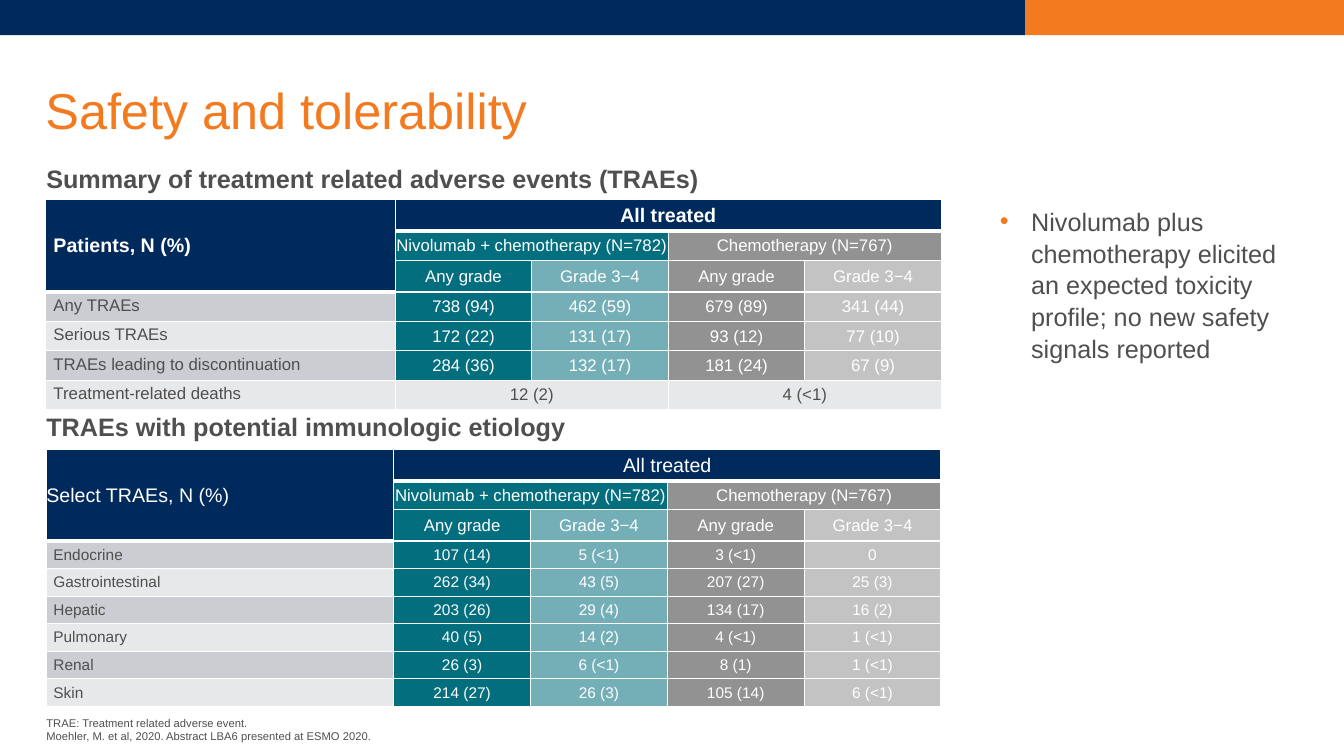
from dataclasses import dataclass

from lxml import etree
from pptx import Presentation
from pptx import util as u
from pptx.dml.color import RGBColor
from pptx.enum import shapes, text
from pptx.oxml import ns

COLORS = {
    "navy": "002A5C", "orange": "F47A20", "white": "FFFFFF", "text": "4E4F4E",
    "teal": "026E7E", "grey": "929292", "band": "CCCDD2", "light": "E7E8EA",
}
FONT = "Arial"
ARM_FILLS = [("teal", 100), ("teal", 55), ("grey", 100), ("grey", 55)]
SLIDE_W, SLIDE_H = u.Inches(13.333), u.Inches(7.5)
HEADER_ROWS = 3


@dataclass
class Box:
    """Place and size in percent of the slide's width and height."""
    left: float
    top: float
    width: float
    height: float

    def emu(self) -> tuple[int, int, int, int]:
        return col(self.left), row(self.top), col(self.width), row(self.height)


@dataclass
class EventTable:
    """One adverse-event table; None continues the cell to its left."""
    heading: str
    heading_top: float
    left: float
    top: float
    label_width: float
    value_width: float
    header_heights: tuple[float, float, float]
    row_height: float
    corner: str
    corner_margin: float
    label_margin: float
    label_anchor: text.MSO_ANCHOR
    bold_header: bool
    size: int
    pad: float
    rows: list[tuple[str | None, ...]]


TABLES = [
    EventTable(
        "Summary of treatment related adverse events (TRAEs)", 20.93,
        3.38, 26.4, 26.03, 10.16, (4.13, 3.87, 4.07), 3.89,
        "Patients, N (%)", 0.08, 0.08, text.MSO_ANCHOR.TOP, True, 12, 0.04,
        [("Any TRAEs", "738 (94)", "462 (59)", "679 (89)", "341 (44)"),
         ("Serious TRAEs", "172 (22)", "131 (17)", "93 (12)", "77 (10)"),
         ("TRAEs leading to discontinuation", "284 (36)", "132 (17)", "181 (24)", "67 (9)"),
         ("Treatment-related deaths", "12 (2)", None, "4 (<1)", None)]),
    EventTable(
        "TRAEs with potential immunologic etiology", 53.73,
        3.45, 59.47, 25.85, 10.18, (4.13, 3.7, 4.13), 3.65,
        "Select TRAEs, N (%)", 0, 0.07, text.MSO_ANCHOR.MIDDLE, False, 11, 0,
        [("Endocrine", "107 (14)", "5 (<1)", "3 (<1)", "0"),
         ("Gastrointestinal", "262 (34)", "43 (5)", "207 (27)", "25 (3)"),
         ("Hepatic", "203 (26)", "29 (4)", "134 (17)", "16 (2)"),
         ("Pulmonary", "40 (5)", "14 (2)", "4 (<1)", "1 (<1)"),
         ("Renal", "26 (3)", "6 (<1)", "8 (1)", "1 (<1)"),
         ("Skin", "214 (27)", "26 (3)", "105 (14)", "6 (<1)")]),
]


def col(percent: float) -> int:
    return round(SLIDE_W * percent / 100)


def row(percent: float) -> int:
    return round(SLIDE_H * percent / 100)


def rgb(name: str) -> RGBColor:
    return RGBColor.from_string(COLORS[name])


def sub(parent, tag: str, **attrs: str):
    return etree.SubElement(parent, ns.qn(tag), attrs)


def style(p, size: float, color: str, bold: bool = False) -> None:
    p.font.name, p.font.size, p.font.bold = FONT, u.Pt(size), bold
    p.font.color.rgb = rgb(color)


def place(sp, box: Box) -> None:
    sp.left, sp.top, sp.width, sp.height = box.emu()


def set_margins(item, left: float, top: float, right: float, bottom: float) -> None:
    item.margin_left, item.margin_top = u.Inches(left), u.Inches(top)
    item.margin_right, item.margin_bottom = u.Inches(right), u.Inches(bottom)


def add_bar(s, box: Box, color: str) -> None:
    sp = s.shapes.add_shape(shapes.MSO_SHAPE.RECTANGLE, *box.emu())
    sp.shadow.inherit = False
    sp.fill.solid()
    sp.fill.fore_color.rgb = rgb(color)
    sp.line.fill.background()


def add_text(s, box: Box, lines: list[str], size: float, bold: bool = False):
    tf = s.shapes.add_textbox(*box.emu()).text_frame
    tf.word_wrap = True
    tf.text = "\n".join(lines)
    for p in tf.paragraphs:
        style(p, size, "text", bold)
    return tf


def paint_cell(cell, color: str, alpha: int, bottom: float) -> None:
    """Fill a cell and give it white borders."""
    cell.fill.solid()
    cell.fill.fore_color.rgb = rgb(color)
    tc_pr = cell._tc.get_or_add_tcPr()
    if alpha < 100:
        sub(tc_pr.find(".//" + ns.qn("a:srgbClr")), "a:alpha", val=str(alpha * 1000))
    for i, side in enumerate("LRTB"):
        width = bottom if side == "B" else 1
        ln = etree.Element(ns.qn("a:ln" + side), w=str(u.Pt(width)))
        sub(sub(ln, "a:solidFill"), "a:srgbClr", val=COLORS["white"])
        tc_pr.insert(i, ln)


def add_event_table(s, t: EventTable) -> None:
    tf = add_text(s, Box(3.45, t.heading_top, 56.63, 5.33), [t.heading], 18, True)
    set_margins(tf, 0, 0.05, 0.1, 0.05)

    grid = [(t.corner, "All treated", None, None, None),
            (None, "Nivolumab + chemotherapy (N=782)", None, "Chemotherapy (N=767)", None),
            (None, *["Any grade", "Grade 3−4"] * 2), *t.rows]
    widths = [t.label_width] + [t.value_width] * 4
    heights = [*t.header_heights] + [t.row_height] * len(t.rows)
    box = Box(t.left, t.top, sum(widths), sum(heights))
    table = s.shapes.add_table(len(grid), len(widths), *box.emu()).table
    table.first_row = table.horz_banding = False
    for column, width in zip(table.columns, widths):
        column.width = col(width)
    for r, height in enumerate(heights):
        table.rows[r].height = row(height)

    for r, values in enumerate(grid):
        header = r < HEADER_ROWS
        for c, value in enumerate(values):
            cell = table.cell(r, c)
            label = c == 0
            top_level = header and (r == 0 or label)
            band = "band" if (r - HEADER_ROWS) % 2 == 0 else "light"
            wide = not header and None in values
            if top_level:
                fill, alpha = "navy", 100
            elif label or wide:
                fill, alpha = band, 100
            else:
                fill, alpha = ARM_FILLS[c - 1]
            paint_cell(cell, fill, alpha, 3 if top_level else 1)

            pad = 0.04 if header else t.pad
            left = (t.corner_margin if header else t.label_margin) if label else 0
            set_margins(cell, left, pad, 0, pad)
            cell.vertical_anchor = t.label_anchor if label and not header else text.MSO_ANCHOR.MIDDLE
            cell.text = value or ""
            p = cell.text_frame.paragraphs[0]
            p.alignment = text.PP_ALIGN.LEFT if label else text.PP_ALIGN.CENTER
            size = 14 if top_level else 12 if header else t.size
            color = "text" if not header and (label or wide) else "white"
            style(p, size, color, top_level and t.bold_header)

    table.cell(0, 0).merge(table.cell(HEADER_ROWS - 1, 0))
    for r, values in enumerate(grid):
        starts = [c for c in range(1, len(values)) if values[c] is not None]
        for start, end in zip(starts, starts[1:] + [len(values)]):
            if end - start > 1:
                table.cell(r, start).merge(table.cell(r, end - 1))


def set_title(sp) -> None:
    place(sp, Box(3.38, 5.33, 93.3, 19.33))
    tf = sp.text_frame
    tf.text = "Safety and tolerability"
    tf.vertical_anchor = text.MSO_ANCHOR.MIDDLE
    tf.auto_size = text.MSO_AUTO_SIZE.NONE
    set_margins(tf, 0, 0, 0, 0)
    p = tf.paragraphs[0]
    p.alignment, p.line_spacing = text.PP_ALIGN.LEFT, 0.9
    style(p, 36, "orange")


def set_takeaway(sp) -> None:
    place(sp, Box(73.65, 26.4, 22.88, 36.8))
    sp.fill.solid()
    sp.fill.fore_color.rgb = rgb("white")
    tf = sp.text_frame
    tf.text = ("Nivolumab plus chemotherapy elicited an expected toxicity profile; "
               "no new safety signals reported")
    tf.auto_size = text.MSO_AUTO_SIZE.NONE
    p = tf.paragraphs[0]
    p.space_before, p.line_spacing = u.Pt(0), 1.05
    p_pr = p._p.get_or_add_pPr()
    indent = u.Inches(0.31)
    p_pr.set("marL", str(indent))
    p_pr.set("indent", str(-indent))
    sub(sub(p_pr, "a:buClr"), "a:srgbClr", val=COLORS["orange"])
    sub(p_pr, "a:buFont", typeface=FONT)
    sub(p_pr, "a:buChar", char="•")
    style(p, 18, "text")


def main() -> None:
    prs = Presentation()
    prs.slide_width, prs.slide_height = SLIDE_W, SLIDE_H
    s = prs.slides.add_slide(prs.slide_layouts[1])
    add_bar(s, Box(0, 0, 76.28, 4.67), "navy")
    add_bar(s, Box(76.28, 0, 23.72, 4.67), "orange")
    set_title(s.shapes.title)
    set_takeaway(s.placeholders[1])
    for t in TABLES:
        add_event_table(s, t)
    notes = ["TRAE: Treatment related adverse event.",
             "Moehler, M. et al, 2020. Abstract LBA6 presented at ESMO 2020."]
    tf = add_text(s, Box(3.45, 92.93, 70.28, 5.33), notes, 8)
    tf.vertical_anchor = text.MSO_ANCHOR.BOTTOM
    set_margins(tf, 0, 0, 0, 0)
    prs.save("out.pptx")


if __name__ == "__main__":
    main()
